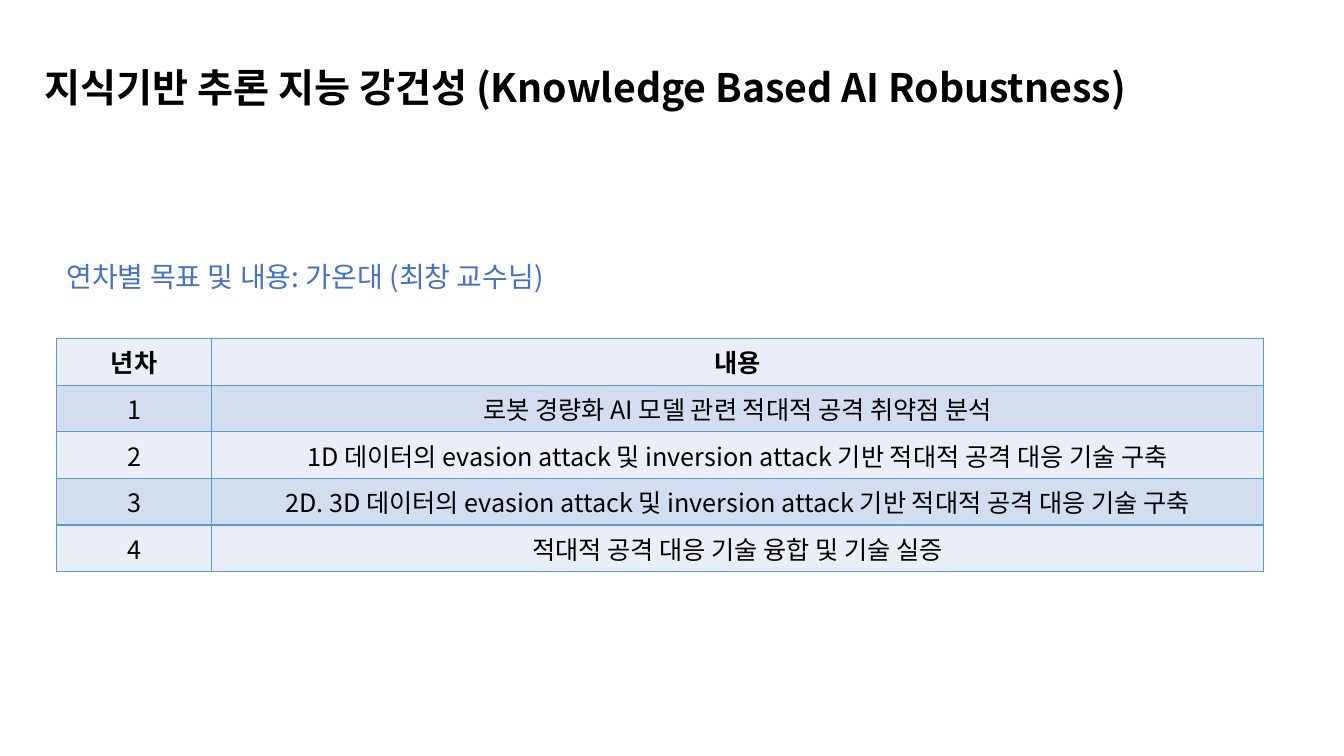
from dataclasses import dataclass

from lxml import etree
from pptx import Presentation
from pptx.dml.color import RGBColor
from pptx.enum import text as t
from pptx.oxml import ns
from pptx.util import Inches, Pt

FONT = "Noto Sans CJK KR"
BLACK = RGBColor(0x00, 0x00, 0x00)
HEADING_BLUE = RGBColor(0x44, 0x72, 0xC4)
BORDER_BLUE = RGBColor(0x5B, 0x9B, 0xD5)
ROW_LIGHT = RGBColor(0xEA, 0xEF, 0xF7)
ROW_DARK = RGBColor(0xD2, 0xDE, 0xEF)
COLUMN_WIDTHS = (1.54, 10.43)
ROW_HEIGHT = 0.41


@dataclass
class YearGoal:
    year: str
    content: str


GOALS = [
    YearGoal("년차", "내용"),
    YearGoal("1", "로봇 경량화 AI 모델 관련 적대적 공격 취약점 분석"),
    YearGoal("2", "1D 데이터의 evasion attack 및 inversion attack 기반 적대적 공격 대응 기술 구축"),
    YearGoal("3", "2D. 3D 데이터의 evasion attack 및 inversion attack 기반 적대적 공격 대응 기술 구축"),
    YearGoal("4", "적대적 공격 대응 기술 융합 및 기술 실증"),
]


def add_run(paragraph, wording: str, size: float, color: RGBColor, bold: bool = False) -> None:
    run = paragraph.add_run()
    run.text = wording
    run.font.size = Pt(size)
    run.font.bold = bold
    run.font.color.rgb = color
    run.font.name = FONT
    # Korean glyphs take the East Asian font
    east_asian = etree.SubElement(run.font._element, ns.qn("a:ea"))
    east_asian.set("typeface", FONT)


def add_borders(cell, color: RGBColor, width: float) -> None:
    properties = cell._tc.get_or_add_tcPr()
    for side in ("lnL", "lnR", "lnT", "lnB"):
        line = etree.SubElement(properties, ns.qn(f"a:{side}"), w=str(Pt(width)))
        fill = etree.SubElement(line, ns.qn("a:solidFill"))
        etree.SubElement(fill, ns.qn("a:srgbClr"), val=str(color))


def fill_cell(cell, wording: str, background: RGBColor, bold: bool) -> None:
    add_borders(cell, BORDER_BLUE, 1)
    cell.fill.solid()
    cell.fill.fore_color.rgb = background
    paragraph = cell.text_frame.paragraphs[0]
    paragraph.alignment = t.PP_ALIGN.CENTER
    add_run(paragraph, wording, 18, BLACK, bold)


def add_title(slide) -> None:
    title = slide.shapes.title
    title.left, title.top = Inches(0.34), Inches(0)
    title.width, title.height = Inches(11.5), Inches(1.45)
    frame = title.text_frame
    frame.auto_size = t.MSO_AUTO_SIZE.NONE
    frame.vertical_anchor = t.MSO_ANCHOR.MIDDLE
    paragraph = frame.paragraphs[0]
    paragraph.alignment = t.PP_ALIGN.JUSTIFY
    paragraph.line_spacing = 1.6
    add_run(paragraph, "지식기반 추론 지능 강건성 (Knowledge Based AI Robustness)", 28, BLACK, True)


def add_goal_table(slide, goals: list[YearGoal]) -> None:
    table = slide.shapes.add_table(
        len(goals), len(COLUMN_WIDTHS), Inches(0.56), Inches(3.36),
        Inches(sum(COLUMN_WIDTHS)), Inches(ROW_HEIGHT * len(goals))).table
    for column, width in zip(table.columns, COLUMN_WIDTHS):
        column.width = Inches(width)
    for index, goal in enumerate(goals):
        table.rows[index].height = Inches(ROW_HEIGHT)
        background = ROW_DARK if index % 2 else ROW_LIGHT
        for column_index, wording in enumerate((goal.year, goal.content)):
            fill_cell(table.cell(index, column_index), wording, background, index == 0)


def add_goal_heading(slide) -> None:
    heading = slide.shapes.add_textbox(Inches(0.56), Inches(2.43), Inches(6.2), Inches(0.5))
    frame = heading.text_frame
    frame.word_wrap = True
    frame.auto_size = t.MSO_AUTO_SIZE.SHAPE_TO_FIT_TEXT
    paragraph = frame.paragraphs[0]
    paragraph.alignment = t.PP_ALIGN.JUSTIFY
    paragraph.line_spacing = 1.3
    paragraph.space_before = Pt(5)
    add_run(paragraph, "연차별 목표 및 내용: 가온대 (최창 교수님)", 20, HEADING_BLUE)


def main() -> None:
    presentation = Presentation()
    presentation.slide_width = Inches(13.33)
    presentation.slide_height = Inches(7.5)
    slide = presentation.slides.add_slide(presentation.slide_layouts[5])

    # Title
    add_title(slide)
    # Goals for each year
    add_goal_table(slide, GOALS)
    add_goal_heading(slide)

    presentation.save("out.pptx")


if __name__ == "__main__":
    main()
